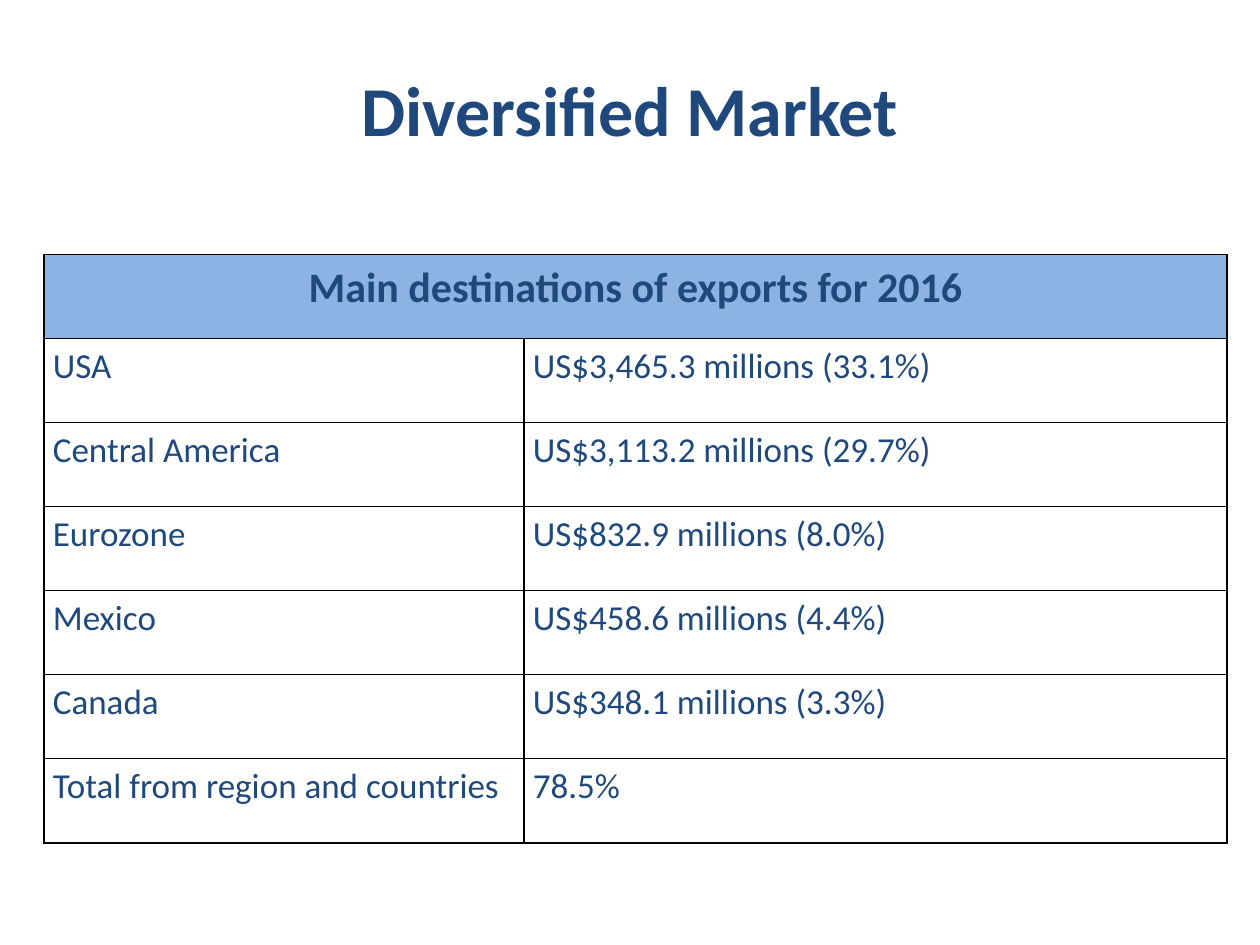
from dataclasses import dataclass

from lxml import etree
from pptx import Presentation
from pptx.dml.color import RGBColor
from pptx.enum.text import MSO_ANCHOR, PP_ALIGN
from pptx.oxml.ns import qn
from pptx.util import Inches, Pt

CENTER, JUSTIFY = PP_ALIGN.CENTER, PP_ALIGN.JUSTIFY
MIDDLE, TOP = MSO_ANCHOR.MIDDLE, MSO_ANCHOR.TOP
TITLE_ONLY = 5


@dataclass
class Theme:
    font: str = "Calibri"
    ink: str = "1F497D"
    header_fill: str = "8DB3E2"
    border: str = "000000"
    border_width: int = Pt(1)
    title_size: int = 40
    header_size: int = 24
    body_size: int = 20


theme = Theme()


def write_text(frame, text, size, bold, align, spacing):
    para = frame.paragraphs[0]
    para.alignment = align
    para.line_spacing = spacing
    span = para.add_run()
    span.text = text
    span.font.name = theme.font
    span.font.size = Pt(size)
    span.font.bold = bold
    span.font.color.rgb = RGBColor.from_string(theme.ink)
    return para


def add_borders(cell):
    properties = cell._tc.get_or_add_tcPr()
    for side in ("a:lnL", "a:lnR", "a:lnT", "a:lnB"):
        line = etree.SubElement(properties, qn(side), w=str(theme.border_width))
        fill = etree.SubElement(line, qn("a:solidFill"))
        etree.SubElement(fill, qn("a:srgbClr"), val=theme.border)


deck = Presentation()
deck.slide_width, deck.slide_height = Inches(10), Inches(7.5)
page = deck.slides.add_slide(deck.slide_layouts[TITLE_ONLY])

# Title
title = page.shapes.title
title.left, title.top = int(deck.slide_width * 0.05), int(deck.slide_height * 0.04)
title.width, title.height = int(deck.slide_width * 0.9), Inches(1.25)
title.text_frame.word_wrap = True
title.text_frame.vertical_anchor = MIDDLE
write_text(title.text_frame, "Diversified Market", theme.title_size, True, CENTER, 0.8)

# Export destinations
rows = [
    ("Main destinations of exports for 2016", ""),
    ("USA", "US$3,465.3 millions (33.1%)"),
    ("Central America", "US$3,113.2 millions (29.7%)"),
    ("Eurozone", "US$832.9 millions (8.0%)"),
    ("Mexico", "US$458.6 millions (4.4%)"),
    ("Canada", "US$348.1 millions (3.3%)"),
    ("Total from region and countries", "78.5%"),
]
column_widths = [Inches(3.81), Inches(5.58)]
row_height = Inches(4.67) // len(rows)
table = page.shapes.add_table(
    len(rows), len(column_widths), Inches(0.35), Inches(2.02),
    sum(column_widths), row_height * len(rows),
).table
table.first_row = table.horz_banding = False
for column, width in zip(table.columns, column_widths):
    column.width = width
table.cell(0, 0).merge(table.cell(0, 1))

for row, texts in enumerate(rows):
    header = row == 0
    for column, text in enumerate(texts):
        cell = table.cell(row, column)
        cell.margin_left = cell.margin_right = Inches(0.07)
        cell.margin_top = cell.margin_bottom = 0
        cell.vertical_anchor = TOP
        add_borders(cell)
        if header:
            cell.fill.solid()
            cell.fill.fore_color.rgb = RGBColor.from_string(theme.header_fill)
        else:
            cell.fill.background()
        if text:
            size = theme.header_size if header else theme.body_size
            align = CENTER if header else JUSTIFY
            para = write_text(cell.text_frame, text, size, header, align, 1.15)
            para.space_after = Pt(10)

deck.save("out.pptx")
